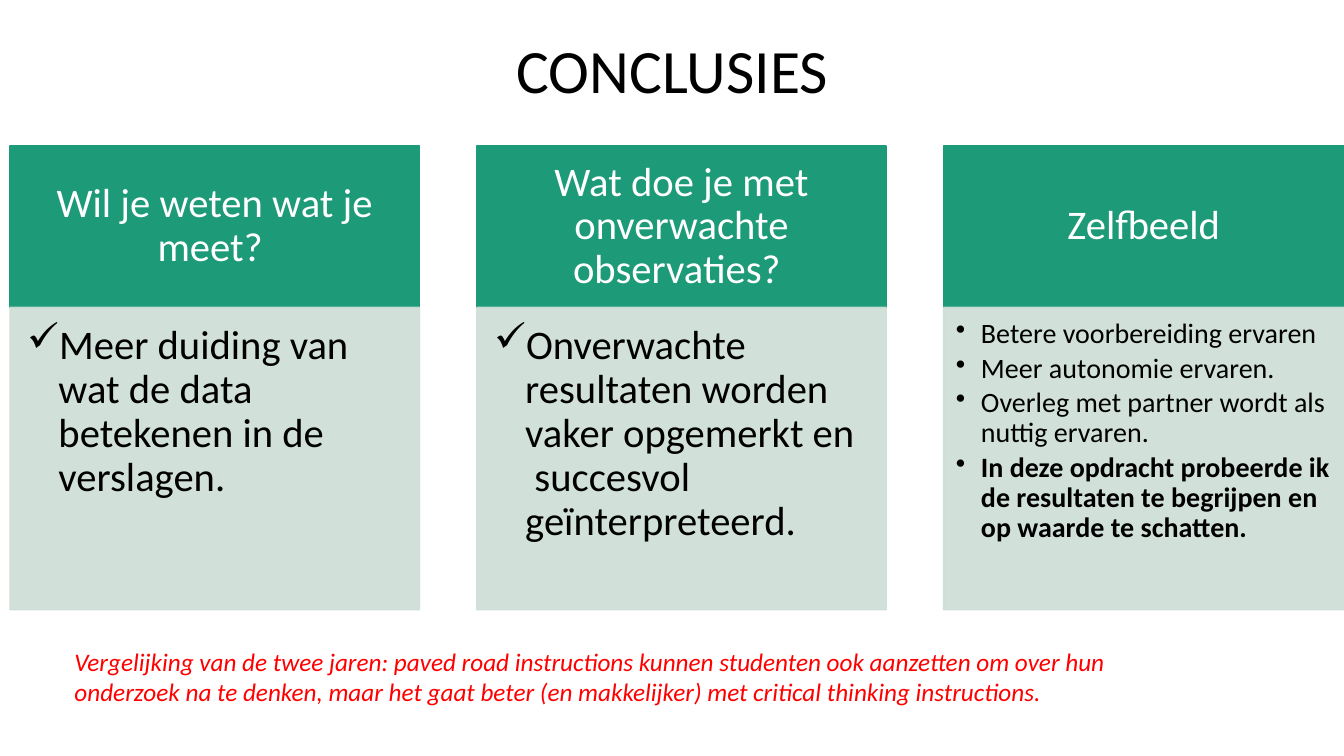
from lxml.etree import SubElement
from pptx import Presentation
from pptx.dml.color import RGBColor
from pptx.enum.shapes import MSO_SHAPE
from pptx.enum.text import MSO_ANCHOR, PP_ALIGN
from pptx.oxml.ns import qn
from pptx.util import Inches, Pt

GREEN = RGBColor(0x1D, 0x9A, 0x78)
PALE_GREEN = RGBColor(0xCD, 0xDE, 0xD6)
WHITE = RGBColor(0xFF, 0xFF, 0xFF)
BLACK = RGBColor(0, 0, 0)
RED = RGBColor(0xFF, 0, 0)

FIRST_COLUMN, COLUMN_STEP, COLUMN_WIDTH = 0.1, 4.63, 4.06
HEADING_TOP, HEADING_HEIGHT, BODY_HEIGHT = 1.45, 1.6, 3
BODY_TOP = HEADING_TOP + HEADING_HEIGHT
HEADING_INSETS = (0.23, 0.13, 0.23, 0.13)
LARGE_STYLE = {"bullet": "✓", "indent": 0.31, "size": 29, "insets": (0.17, 0.17, 0.23, 0.25)}
SMALL_STYLE = {"bullet": "•", "indent": 0.25, "size": 20, "insets": (0.12, 0.12, 0.16, 0.17)}

COLUMNS = [
    ("Wil je weten wat je meet? ",
     ["Meer duiding van wat de data betekenen in de verslagen."], LARGE_STYLE),
    ("Wat doe je met onverwachte observaties? ",
     ["Onverwachte resultaten worden vaker opgemerkt en  succesvol geïnterpreteerd."], LARGE_STYLE),
    ("Zelfbeeld ",
     ["Betere voorbereiding ervaren",
      "Meer autonomie ervaren.",
      "Overleg met partner wordt als nuttig ervaren.",
      "In deze opdracht probeerde ik de resultaten te begrijpen en op waarde te schatten."], SMALL_STYLE),
]
COMPARISON = ("Vergelijking van de twee jaren: paved road instructions kunnen studenten ook aanzetten "
              "om over hun onderzoek na te denken, maar het gaat beter (en makkelijker) met "
              "critical thinking instructions.")


def set_frame(frame, anchor, insets=(0.1, 0.05, 0.1, 0.05)):
    """Wrap a text frame and set its anchor and insets in inches."""
    frame.word_wrap = True
    frame.vertical_anchor = anchor
    frame.margin_left, frame.margin_top, frame.margin_right, frame.margin_bottom = map(Inches, insets)


def write(paragraph, text, size, color, align=PP_ALIGN.LEFT, spacing=0.9, bold=False, italic=False):
    """Fill a paragraph with text in one style."""
    paragraph.text = text
    paragraph.alignment = align
    paragraph.line_spacing = spacing
    font = paragraph.font
    font.name, font.size, font.color.rgb = "Calibri", Pt(size), color
    font.bold, font.italic = bold, italic


def add_bullet(paragraph, character, indent):
    """Give a paragraph a bullet with a hanging indent in inches."""
    properties = paragraph._p.get_or_add_pPr()
    properties.set("marL", str(Inches(indent)))
    properties.set("indent", str(-Inches(indent)))
    SubElement(properties, qn("a:buChar")).set("char", character)


def add_panel(page, left, top, height, color, opacity=100):
    """Draw one filled cell of a column."""
    panel = page.shapes.add_shape(
        MSO_SHAPE.RECTANGLE, Inches(left), Inches(top), Inches(COLUMN_WIDTH), Inches(height))
    panel.shadow.inherit = False
    panel.fill.solid()
    panel.fill.fore_color.rgb = color
    panel.line.color.rgb = color
    panel.line.width = Pt(1)
    if opacity < 100:
        for tint in panel._element.spPr.iter(qn("a:srgbClr")):
            SubElement(tint, qn("a:alpha")).set("val", str(opacity * 1000))
    return panel


def add_column(page, left, heading, points, style):
    """Draw a heading cell with its list of points below."""
    frame = add_panel(page, left, HEADING_TOP, HEADING_HEIGHT, GREEN).text_frame
    set_frame(frame, MSO_ANCHOR.MIDDLE, HEADING_INSETS)
    write(frame.paragraphs[0], heading, 29, WHITE, PP_ALIGN.CENTER)

    frame = add_panel(page, left, BODY_TOP, BODY_HEIGHT, PALE_GREEN, 90).text_frame
    set_frame(frame, MSO_ANCHOR.TOP, style["insets"])
    for index, point in enumerate(points):
        paragraph = frame.add_paragraph() if index else frame.paragraphs[0]
        add_bullet(paragraph, style["bullet"], style["indent"])
        write(paragraph, point, style["size"], BLACK, bold=index == 3)
        paragraph.space_after = Pt(style["size"] * 0.15)


def add_text(page, area, text, size, color, anchor=MSO_ANCHOR.TOP, **style):
    """Place a text box with one paragraph."""
    frame = page.shapes.add_textbox(*map(Inches, area)).text_frame
    set_frame(frame, anchor)
    write(frame.paragraphs[0], text, size, color, **style)


def main():
    """Build the conclusions slide."""
    deck = Presentation()
    deck.slide_width, deck.slide_height = Inches(13.33), Inches(7.5)
    page = deck.slides.add_slide(deck.slide_layouts[6])
    add_text(page, (0.92, 0, 11.5, 1.45), "CONCLUSIES", 44, BLACK,
             MSO_ANCHOR.MIDDLE, align=PP_ALIGN.CENTER)
    for index, (heading, points, style) in enumerate(COLUMNS):
        add_column(page, FIRST_COLUMN + index * COLUMN_STEP, heading, points, style)
    add_text(page, (0.64, 6.36, 10.87, 0.71), COMPARISON, 18, RED, spacing=1, italic=True)
    deck.save("out.pptx")


if __name__ == "__main__":
    main()
